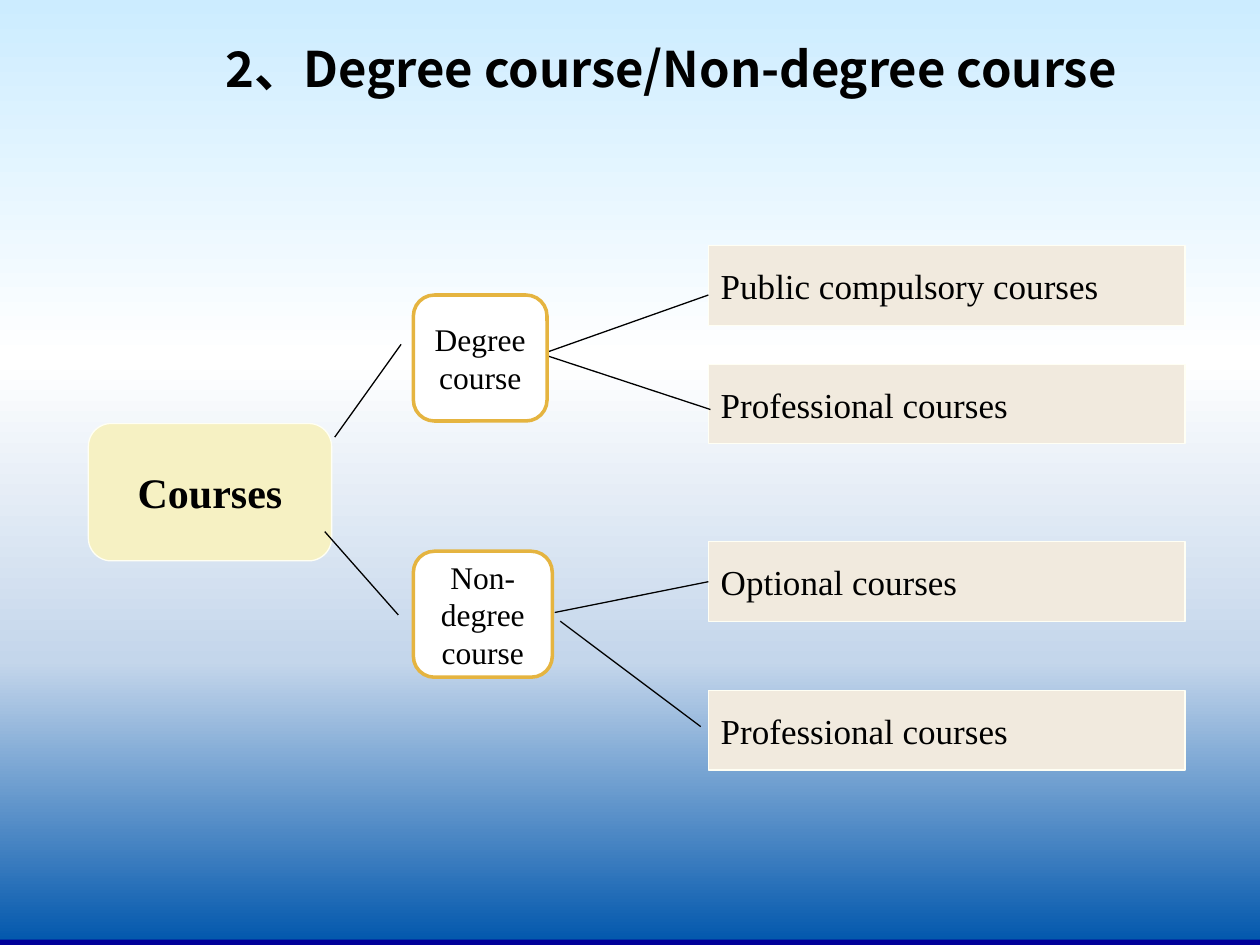
from dataclasses import dataclass
from typing import NamedTuple

from lxml import etree
from pptx import Presentation
from pptx.dml.color import RGBColor
from pptx.enum.shapes import MSO_CONNECTOR, MSO_SHAPE
from pptx.enum.text import MSO_ANCHOR, PP_ALIGN
from pptx.oxml.ns import qn
from pptx.util import Pt

RECT, ROUNDED = MSO_SHAPE.RECTANGLE, MSO_SHAPE.ROUNDED_RECTANGLE
STRAIGHT = MSO_CONNECTOR.STRAIGHT
LEFT, CENTER = PP_ALIGN.LEFT, PP_ALIGN.CENTER
MIDDLE = MSO_ANCHOR.MIDDLE
TITLE_ONLY = 5


@dataclass(frozen=True)
class Theme:
    title_font: str = "Noto Sans CJK SC"
    body_font: str = "Times New Roman"
    ink: str = "000000"
    footer: str = "000099"
    gradient: tuple = ((0, "CCECFF"), (38, "FFFFFF"), (70, "C4D6EB"), (100, "0056AC"))
    title_size: float = 28
    connector_width: float = 0.75


class BoxStyle(NamedTuple):
    geometry: int
    fill: str
    line: str
    line_width: float
    size: float
    bold: bool
    align: int


class Node(NamedTuple):
    label: str
    left: float
    top: float
    width: float
    height: float
    style: BoxStyle


class Link(NamedTuple):
    x1: float
    y1: float
    x2: float
    y2: float


THEME = Theme()
ROOT = BoxStyle(ROUNDED, "F6F1C3", "FFFFF4", 0.75, 24, True, CENTER)
BRANCH = BoxStyle(ROUNDED, "FFFFFF", "E5B440", 2, 18, False, CENTER)
LEAF = BoxStyle(RECT, "F1EADE", "FFFFF4", 0.75, 20, False, LEFT)

LEAVES = (
    ("Public compulsory courses", 140.5),
    ("Professional courses", 208.2),
    ("Optional courses", 309.6),
    ("Professional courses", 394.6),
)
NODES = (
    Node("Courses", 50.5, 242, 139, 78.5, ROOT),
    *(Node(label, 404.8, top, 272.4, 45.4, LEAF) for label, top in LEAVES),
    Node("Degree course", 236.2, 168.6, 76.4, 72, BRANCH),
    Node("Non-degree course", 236.2, 315, 79.4, 72, BRANCH),
)
LINKS = (
    # Courses to its two branches
    Link(191.3, 249.8, 229.2, 196.8),
    Link(185.6, 303.8, 227.6, 351.4),
    # Degree course to its leaves
    Link(309.6, 202.3, 404.8, 168.6),
    Link(309.6, 202.3, 406, 234),
    # Non-degree course to its leaves
    Link(317, 350, 404.8, 332.4),
    Link(320.2, 355, 400.4, 415.2),
)


def set_values(target, values: dict) -> None:
    for name, value in values.items():
        setattr(target, name, value)


def set_font(font, face: str, size: float, bold: bool) -> None:
    set_values(font, {"name": face, "size": Pt(size), "bold": bold})
    font.color.rgb = RGBColor.from_string(THEME.ink)


def paint_background(slide) -> None:
    fill = slide.background.fill
    fill.gradient()
    fill.gradient_angle = 270
    stops = slide.element.find(".//" + qn("a:gsLst"))
    for stop in list(stops):
        stops.remove(stop)
    for percent, color in THEME.gradient:
        stop = etree.SubElement(stops, qn("a:gs"), pos=str(percent * 1000))
        etree.SubElement(stop, qn("a:srgbClr"), val=color)


def add_footer_bar(slide) -> None:
    bar = slide.shapes.add_shape(RECT, Pt(0), Pt(537), Pt(720), Pt(3))
    bar.shadow.inherit = False
    bar.fill.solid()
    bar.fill.fore_color.rgb = RGBColor.from_string(THEME.footer)
    bar.line.fill.background()


def fill_title(slide, text: str) -> None:
    title = slide.shapes.title
    set_values(title, {"left": Pt(121.7), "top": Pt(17.3),
                       "width": Pt(555.8), "height": Pt(43.2)})
    frame = title.text_frame
    set_values(frame, {"word_wrap": True, "vertical_anchor": MIDDLE})
    paragraph = frame.paragraphs[0]
    paragraph.alignment = LEFT
    run = paragraph.add_run()
    run.text = text
    set_font(run.font, THEME.title_font, THEME.title_size, True)
    # The ideographic comma takes the East Asian typeface
    east_asian = etree.Element(qn("a:ea"), typeface=THEME.title_font)
    run.font._element.find(qn("a:latin")).addnext(east_asian)


def add_link(slide, link: Link) -> None:
    connector = slide.shapes.add_connector(STRAIGHT, *(Pt(value) for value in link))
    connector.line.color.rgb = RGBColor.from_string(THEME.ink)
    connector.line.width = Pt(THEME.connector_width)
    etree.SubElement(connector._element.spPr, qn("a:effectLst"))


def add_node(slide, node: Node) -> None:
    style = node.style
    box = slide.shapes.add_shape(style.geometry, Pt(node.left), Pt(node.top),
                                 Pt(node.width), Pt(node.height))
    box.shadow.inherit = False
    box.fill.solid()
    box.fill.fore_color.rgb = RGBColor.from_string(style.fill)
    box.line.color.rgb = RGBColor.from_string(style.line)
    box.line.width = Pt(style.line_width)
    frame = box.text_frame
    set_values(frame, {"word_wrap": True, "vertical_anchor": MIDDLE})
    paragraph = frame.paragraphs[0]
    paragraph.alignment = style.align
    run = paragraph.add_run()
    run.text = node.label
    set_font(run.font, THEME.body_font, style.size, style.bold)


def main() -> None:
    deck = Presentation()
    set_values(deck, {"slide_width": Pt(720), "slide_height": Pt(540)})
    slide = deck.slides.add_slide(deck.slide_layouts[TITLE_ONLY])

    # Backdrop and heading
    paint_background(slide)
    add_footer_bar(slide)
    fill_title(slide, "2、Degree course/Non-degree course")

    # Course tree: boxes, with the links on top except under the branch boxes
    root_and_leaves = [node for node in NODES if node.style is not BRANCH]
    branches = [node for node in NODES if node.style is BRANCH]
    for node in root_and_leaves:
        add_node(slide, node)
    for link in LINKS:
        add_link(slide, link)
    for node in branches:
        add_node(slide, node)

    deck.save("out.pptx")


if __name__ == "__main__":
    main()
